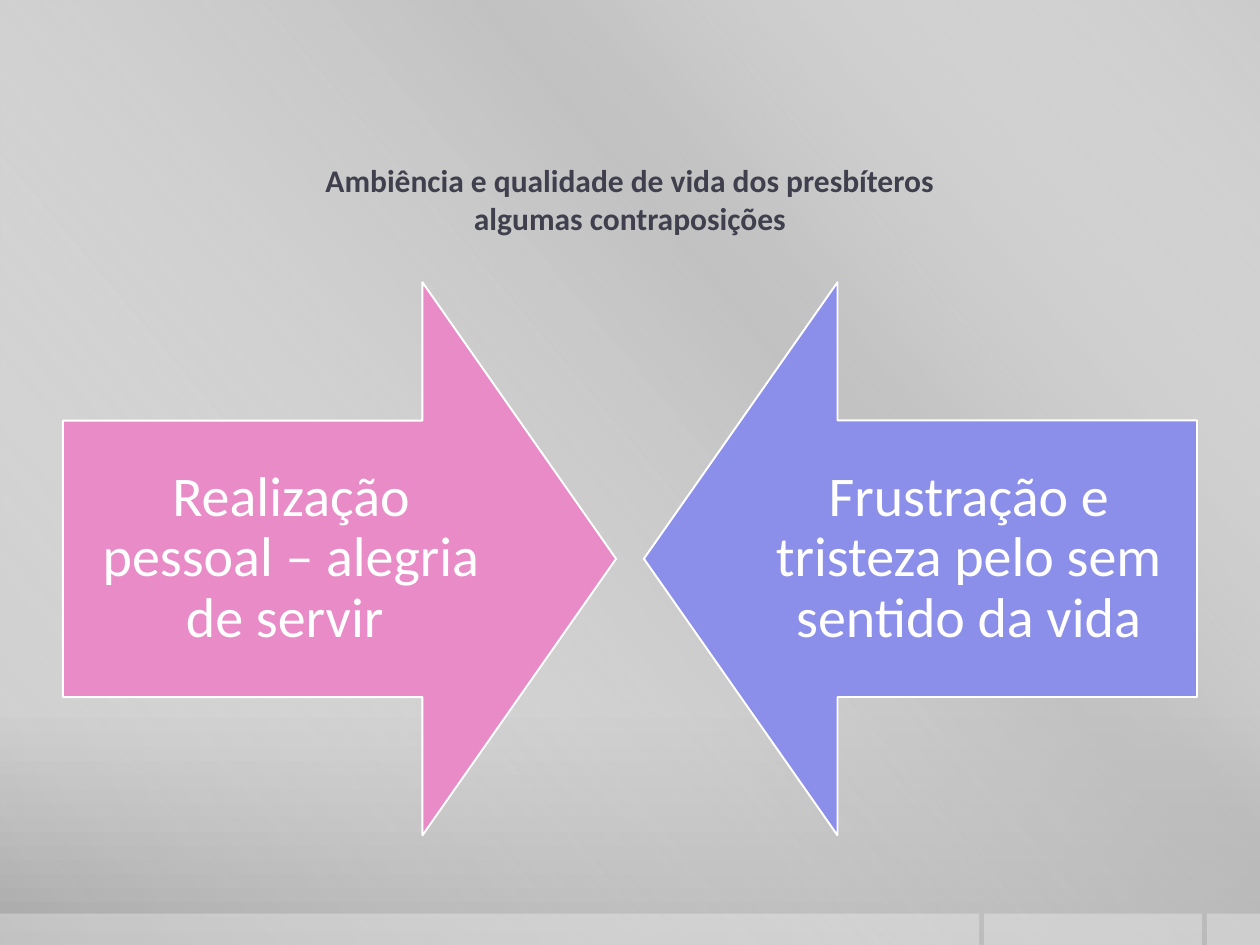
import pptx
import pptx.util
import pptx.dml.color
import pptx.enum.shapes
import pptx.enum.text
import pptx.oxml.ns
from lxml import etree

Cm, Pt = pptx.util.Cm, pptx.util.Pt
RGBColor = pptx.dml.color.RGBColor
MSO_SHAPE = pptx.enum.shapes.MSO_SHAPE
qn = pptx.oxml.ns.qn

FONT = "Calibri"
WHITE = RGBColor(0xFF, 0xFF, 0xFF)
SILVER = RGBColor(0xBF, 0xBF, 0xBF)
TITLE = RGBColor(0x3F, 0x3F, 0x4D)
PINK = RGBColor(0xE9, 0x8B, 0xC7)
BLUE = RGBColor(0x8B, 0x8F, 0xE9)
BG_STOPS = [
    (0, RGBColor(0xCB, 0xCB, 0xCB), 100),
    (76, RGBColor(0xC8, 0xC8, 0xC8), 100),
    (100, RGBColor(0xA7, 0xA7, 0xA7), 100),
]
SHEEN_STOPS = [(0, WHITE, 0), (34, SILVER, 61), (38, SILVER, 76), (100, WHITE, 0)]

WIDTH, HEIGHT = 25.4, 19.05
MARGIN = 1.27
ARROW, ARROW_TOP = 11.15, 5.69
LABEL_W, LABEL_H = 9.2, 5.56
FLOOR_TOP = 18.42


def set_alpha(color, percent):
    etree.SubElement(color, qn("a:alpha"), val=str(percent * 1000))


def set_gradient(fill, parent, stops, angle):
    """Fill with (position, colour, opacity) stops; the angle runs clockwise."""
    fill.gradient()
    fill.gradient_angle = 360 - angle
    gs_list = parent.find(".//" + qn("a:gsLst"))
    for gs in list(gs_list):
        gs_list.remove(gs)
    for pos, color, alpha in stops:
        gs = etree.SubElement(gs_list, qn("a:gs"), pos=str(pos * 1000))
        clr = etree.SubElement(gs, qn("a:srgbClr"), val=str(color))
        if alpha < 100:
            set_alpha(clr, alpha)


def add_plain_shape(s, kind, left, top, width, height):
    sp = s.shapes.add_shape(kind, Cm(left), Cm(top), Cm(width), Cm(height))
    sp.shadow.inherit = False
    sp.line.fill.background()
    return sp


def add_floor_tile(s, left, right):
    sp = add_plain_shape(s, MSO_SHAPE.RECTANGLE, left, FLOOR_TOP,
                         right - left, HEIGHT - FLOOR_TOP)
    sp.fill.solid()
    sp.fill.fore_color.rgb = WHITE
    set_alpha(sp.element.spPr.find(".//" + qn("a:srgbClr")), 30)


def add_text(s, text, box, insets, size, color, bold=False, spacing=None):
    sp = s.shapes.add_textbox(*[Cm(v) for v in box])
    tf = sp.text_frame
    tf.word_wrap = True
    tf.vertical_anchor = pptx.enum.text.MSO_ANCHOR.MIDDLE
    tf.margin_left = tf.margin_right = Cm(insets[0])
    tf.margin_top = tf.margin_bottom = Cm(insets[1])
    tf.text = text
    p = tf.paragraphs[0]
    p.alignment = pptx.enum.text.PP_ALIGN.CENTER
    p.line_spacing = spacing
    for r in p.runs:
        r.font.name = FONT
        r.font.size = Pt(size)
        r.font.bold = bold
        r.font.color.rgb = color


def add_arrow(s, left, rotation, color, label_left, label):
    sp = add_plain_shape(s, MSO_SHAPE.DOWN_ARROW, left, ARROW_TOP, ARROW, ARROW)
    sp.rotation = rotation
    sp.adjustments[0] = 0.5
    sp.adjustments[1] = 0.35
    sp.fill.solid()
    sp.fill.fore_color.rgb = color
    sp.line.color.rgb = WHITE
    sp.line.width = Pt(1.1)
    label_top = ARROW_TOP + (ARROW - LABEL_H) / 2
    add_text(s, label, (label_left, label_top, LABEL_W, LABEL_H),
             (0.64, 0.64), 32, WHITE, spacing=0.9)


def main():
    prs = pptx.Presentation()
    prs.slide_width, prs.slide_height = Cm(WIDTH), Cm(HEIGHT)
    s = prs.slides.add_slide(prs.slide_layouts[6])

    # Background, diagonal sheen and floor
    set_gradient(s.background.fill, s.element, BG_STOPS, 90)
    sheen = add_plain_shape(s, MSO_SHAPE.RECTANGLE, 0, 0, WIDTH, HEIGHT)
    set_gradient(sheen.fill, sheen.element.spPr, SHEEN_STOPS, 140)
    for left, right in [(24.33, WIDTH), (19.84, 24.23), (0, 19.74)]:
        add_floor_tile(s, left, right)

    # Title
    add_text(s, "Ambiência e qualidade de vida dos presbíteros\valgumas contraposições",
             (MARGIN, 2.74, WIDTH - 2 * MARGIN, 2.54), (0, 0.13), 18, TITLE, bold=True)

    # Opposing arrows
    right_edge = WIDTH - MARGIN
    add_arrow(s, MARGIN, 270, PINK, MARGIN,
              "Realização pessoal – alegria de servir ")
    add_arrow(s, right_edge - ARROW, 90, BLUE, right_edge - LABEL_W,
              "Frustração e tristeza pelo sem sentido da vida")

    prs.save("out.pptx")


if __name__ == "__main__":
    main()
